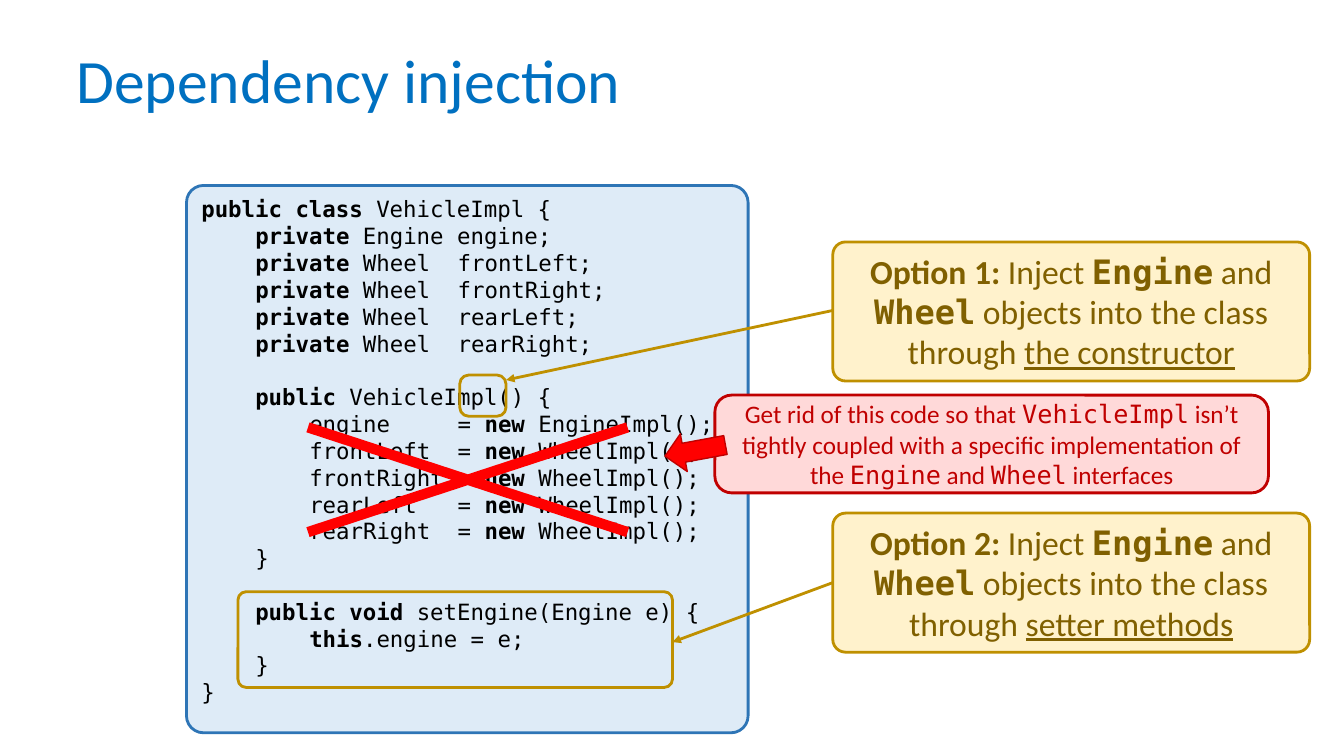
from dataclasses import dataclass

from pptx import Presentation
from pptx import util as u
from pptx.dml.color import RGBColor
from pptx.enum import shapes, text
from pptx.oxml.ns import qn
from lxml import etree

SANS, MONO = "Calibri", "DejaVu Sans Mono"
GOLD, BROWN, CREAM = "BF9000", "806000", "FFF2CC"
RED, DARK_RED, PINK = "FF0000", "C00000", "FFD9D9"
ROUNDED = shapes.MSO_SHAPE.ROUNDED_RECTANGLE

CODE_COLUMN = 0.1338  # width of one 16 pt monospaced character, in inches
TAB_COLUMNS = (4, 8, 19)
CODE_BLANK_LINE = 19

# Keywords stand between asterisks; a blank line starts a new block.
CODE = """public class* VehicleImpl {
\t*private* Engine engine;
\t*private* Wheel\tfrontLeft;
\t*private* Wheel\tfrontRight;
\t*private* Wheel\trearLeft;
\t*private* Wheel\trearRight;

\t*public* VehicleImpl() {
\t\tengine\t= *new* EngineImpl();
\t\tfrontLeft\t= *new* WheelImpl();
\t\tfrontRight\t= *new* WheelImpl();
\t\trearLeft\t= *new* WheelImpl();
\t\trearRight\t= *new* WheelImpl();
\t}

\t*public void* setEngine(Engine e) {
\t\t*this*.engine = e;
\t}
}"""


@dataclass(frozen=True)
class Box:
    left: float
    top: float
    width: float
    height: float
    corner: float | None = None

    def frame(self) -> list:
        return [u.Inches(v) for v in (self.left, self.top, self.width, self.height)]


@dataclass(frozen=True)
class Run:
    words: str
    font: str = SANS
    bold: bool = False
    underline: bool = False


@dataclass(frozen=True)
class Option:
    number: int
    means: str
    box: Box
    target: Box
    arrow_start: tuple[float, float]
    arrow_end: tuple[float, float]


OPTIONS = [
    Option(1, "the constructor", Box(8.26, 2.4, 4.73, 1.38, 0.092),
           Box(4.56, 3.72, 0.46, 0.41, 0.221), (8.26, 3.08), (5.02, 3.77)),
    Option(2, "setter methods", Box(8.26, 5.09, 4.73, 1.38, 0.092),
           Box(2.36, 5.87, 4.31, 0.95, 0.087), (8.26, 5.78), (6.67, 6.37)),
]


def rgb(color: str) -> RGBColor:
    return RGBColor.from_string(color)


def add_block(slide, kind, box: Box, fill: str | None = None,
              line: str | None = None, weight: float = 2):
    block = slide.shapes.add_shape(kind, *box.frame())
    block.shadow.inherit = False
    if box.corner is not None:
        block.adjustments[0] = box.corner
    if fill:
        block.fill.solid()
        block.fill.fore_color.rgb = rgb(fill)
    else:
        block.fill.background()
    if line:
        block.line.color.rgb = rgb(line)
        block.line.width = u.Pt(weight)
    else:
        block.line.fill.background()
    return block


def write(paragraph, runs: list[Run], *, size: float, color: str,
          align=text.PP_ALIGN.LEFT, before: float = 0, after: float = 0) -> None:
    paragraph.alignment = align
    paragraph.space_before = u.Pt(before)
    paragraph.space_after = u.Pt(after)
    for part in runs:
        run = paragraph.add_run()
        run.text = part.words
        run.font.name = part.font
        run.font.size = u.Pt(size)
        run.font.bold = part.bold
        run.font.underline = part.underline
        run.font.color.rgb = rgb(color)


def set_code_tabs(paragraph) -> None:
    tabs = etree.SubElement(paragraph._p.get_or_add_pPr(), qn("a:tabLst"))
    for column in TAB_COLUMNS:
        position = u.Inches(column * CODE_COLUMN)
        etree.SubElement(tabs, qn("a:tab"), pos=str(int(position)), algn="l")


def add_title(slide) -> None:
    title = slide.shapes.add_textbox(*Box(0.66, 0.4, 11.76, 0.85).frame()).text_frame
    title.word_wrap = True
    title.vertical_anchor = text.MSO_ANCHOR.MIDDLE
    write(title.paragraphs[0], [Run("Dependency injection")], size=44, color="0070C0")
    title.paragraphs[0].line_spacing = 0.9


def add_code(slide) -> None:
    panel = add_block(slide, ROUNDED, Box(1.85, 1.84, 5.57, 5.43, 0.031),
                      "DEEBF7", "2E75B6")
    frame = panel.text_frame
    frame.word_wrap = True
    frame.vertical_anchor = text.MSO_ANCHOR.TOP
    paragraph = frame.paragraphs[0]
    for block_index, block in enumerate(("*" + CODE).split("\n\n")):
        for line_index, line in enumerate(block.split("\n")):
            if block_index or line_index:
                paragraph = frame.add_paragraph()
            runs = [Run(words, MONO, bold=i % 2 == 1)
                    for i, words in enumerate(line.split("*")) if words]
            opens_block = block_index > 0 and line_index == 0
            write(paragraph, runs, size=16, color="000000",
                  before=CODE_BLANK_LINE if opens_block else 0)
            set_code_tabs(paragraph)


def add_note(slide, box: Box, runs: list[Run], *, size: float, color: str,
             fill: str, line: str, anchor) -> None:
    frame = add_block(slide, ROUNDED, box, fill, line).text_frame
    frame.word_wrap = True
    frame.vertical_anchor = anchor
    write(frame.paragraphs[0], runs, size=size, color=color,
          align=text.PP_ALIGN.CENTER, after=12)


def add_arrow(slide, start: tuple[float, float], end: tuple[float, float]) -> None:
    arrow = slide.shapes.add_connector(
        shapes.MSO_CONNECTOR.STRAIGHT, *(u.Inches(v) for v in start + end))
    arrow.line.color.rgb = rgb(GOLD)
    arrow.line.width = u.Pt(2)
    etree.SubElement(arrow.line._get_or_add_ln(), qn("a:tailEnd"), type="triangle")
    etree.SubElement(arrow._element.spPr, qn("a:effectLst"))


def add_option(slide, option: Option) -> None:
    add_block(slide, ROUNDED, option.target, line=GOLD)
    runs = [Run(f"Option {option.number}: ", bold=True), Run("Inject "),
            Run("Engine", MONO, bold=True), Run(" and "),
            Run("Wheel", MONO, bold=True), Run(" objects into the class through "),
            Run(option.means, underline=True)]
    add_note(slide, option.box, runs, size=24, color=BROWN, fill=CREAM, line=GOLD,
             anchor=text.MSO_ANCHOR.TOP)
    add_arrow(slide, option.arrow_start, option.arrow_end)


def add_removal(slide) -> None:
    """Cross out the coupled code and say why it goes."""
    add_block(slide, shapes.MSO_SHAPE.MATH_MULTIPLY, Box(1.59, 3.76, 6.1, 2, 0.051), RED)
    runs = [Run("Get rid of this code so that "), Run("VehicleImpl", MONO),
            Run(" isn’t tightly coupled with a specific implementation of the "),
            Run("Engine", MONO), Run(" and "), Run("Wheel", MONO), Run(" interfaces")]
    add_note(slide, Box(7.09, 3.92, 5.49, 0.97, 0.172), runs, size=18, color=DARK_RED,
             fill=PINK, line=DARK_RED, anchor=text.MSO_ANCHOR.MIDDLE)
    pointer = add_block(slide, shapes.MSO_SHAPE.RIGHT_ARROW,
                        Box(6.59, 4.28, 0.61, 0.38), RED, DARK_RED, weight=1)
    pointer.rotation = 169.6


def main() -> None:
    deck = Presentation()
    deck.slide_width, deck.slide_height = u.Inches(13.33), u.Inches(7.5)
    slide = deck.slides.add_slide(deck.slide_layouts[6])
    add_title(slide)
    add_code(slide)
    for option in OPTIONS:
        add_option(slide, option)
    add_removal(slide)
    deck.save("out.pptx")


if __name__ == "__main__":
    main()
